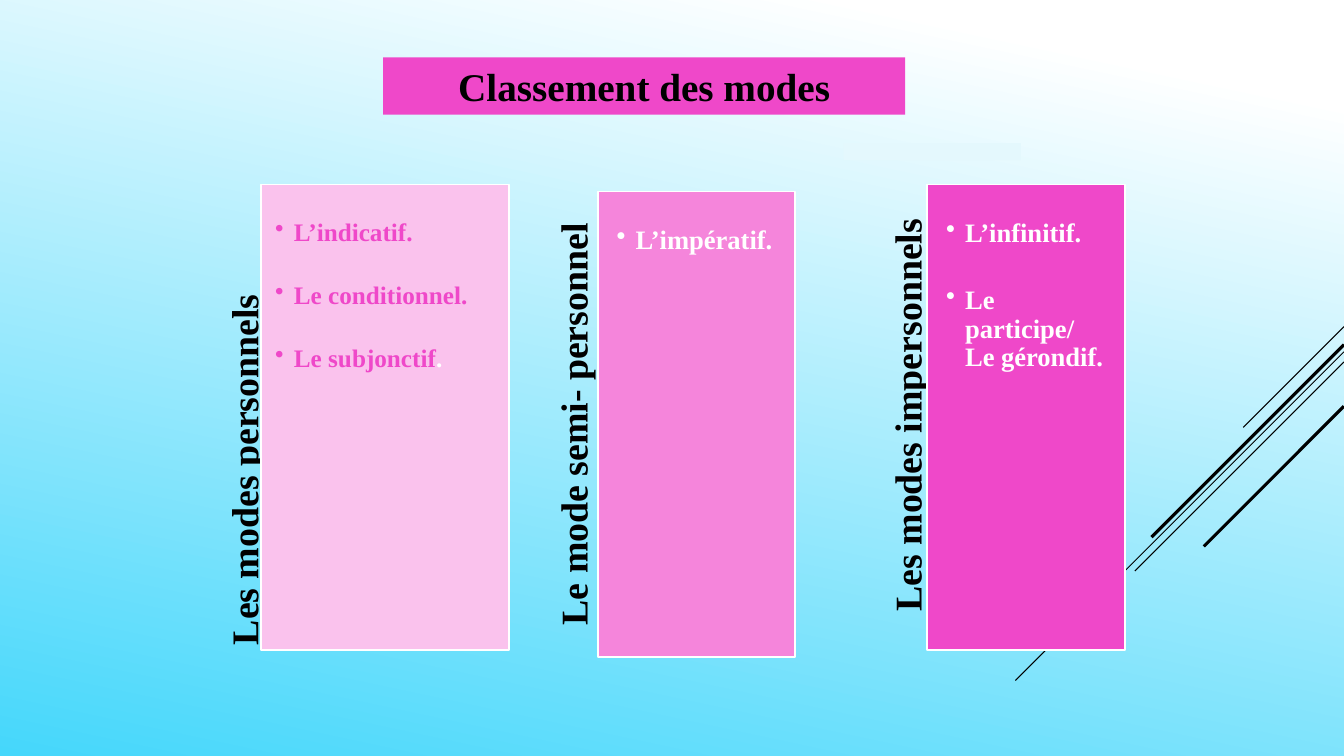
import pptx
import pptx.util
import pptx.dml.color
import pptx.enum.shapes
import pptx.enum.text
import lxml.etree
from pptx.oxml.ns import qn

Pt = pptx.util.Pt
ALIGN = pptx.enum.text.PP_ALIGN
RECT = pptx.enum.shapes.MSO_SHAPE.RECTANGLE
FONT = "Times New Roman"
HUES = {
    "black": "000000", "white": "FFFFFF", "sky": "45D7FB", "mist": "E4F8FD",
    "pale": "FAC2ED", "rose": "F585DB", "pink": "EF48C9",
}
RAYS = [
    (233.3, 72, 0.75), (251.3, 234.7, 0.75), (258.5, 149.4, 0.75),
    (246.2, 137.5, 2.25), (290.2, 100.1, 2.25),
]
MODES = [
    {"box": (186.5, 131.8, 177.1, 332.6), "fill": "pale", "ink": "pink", "size": 18, "pad": 10,
     "items": [[("L’indicatif.", "pink")], [("Le conditionnel.", "pink")],
               [("Le subjonctif", "pink"), (".", "white")]],
     "label": "Les modes personnels", "side": ALIGN.LEFT,
     "shift": (-11.2, 6.1), "span": (313.2, 28.1)},
    {"box": (427, 136.8, 141.1, 332.6), "fill": "rose", "ink": "white", "size": 19, "pad": 13.5,
     "items": [[("L’impératif.", "white")]],
     "label": "Le mode semi- personnel", "side": ALIGN.RIGHT,
     "shift": (-16.6, -2.5), "span": (332.6, 28.1)},
    {"box": (662.4, 131.8, 141.1, 332.6), "fill": "pink", "ink": "white", "size": 19, "pad": 13.5,
     "items": [[("L’infinitif.", "white")], [("Le participe/ Le gérondif.", "white")]],
     "label": "Les modes impersonnels", "side": ALIGN.RIGHT,
     "shift": (-11.9, 1.1), "span": (336.2, 31)},
]


def tint(name):
    return pptx.dml.color.RGBColor.from_string(HUES[name])


def paint(shape, hue):
    shape.fill.solid()
    shape.fill.fore_color.rgb = tint(hue)


def write(para, text, size, hue):
    run = para.add_run()
    run.text = text
    run.font.name = FONT
    run.font.size = Pt(size)
    run.font.bold = True
    run.font.color.rgb = tint(hue)


def inset(frame, left, top, right, bottom):
    frame.word_wrap = True
    frame.auto_size = pptx.enum.text.MSO_AUTO_SIZE.NONE
    frame.margin_left, frame.margin_top = Pt(left), Pt(top)
    frame.margin_right, frame.margin_bottom = Pt(right), Pt(bottom)
    frame.vertical_anchor = pptx.enum.text.MSO_ANCHOR.TOP


def block(slide, box, hue):
    shape = slide.shapes.add_shape(RECT, *map(Pt, box))
    shape.shadow.inherit = False
    paint(shape, hue)
    shape.line.fill.background()
    return shape


def bullet(para):
    props = para._p.get_or_add_pPr()
    props.set("marL", str(Pt(13.5)))
    props.set("indent", str(-Pt(13.5)))
    mark = lxml.etree.SubElement(props, qn("a:buChar"))
    mark.set("char", "•")


def back(slide):
    fill = slide.background.fill
    fill.gradient()
    fill.gradient_angle = 258
    for stop, spot, hue in zip(fill.gradient_stops, (0.1, 1), ("white", "sky")):
        stop.position = spot
        stop.color.rgb = tint(hue)


def rays(slide, edge):
    for top, run, width in RAYS:
        ends = map(Pt, (edge, top, edge - run, top + run))
        line = slide.shapes.add_connector(pptx.enum.shapes.MSO_CONNECTOR.STRAIGHT, *ends)
        line.line.color.rgb = tint("black")
        line.line.width = Pt(width)
        lxml.etree.SubElement(line._element.spPr, qn("a:effectLst"))


def label(slide, mode):
    left, top, wide, high = mode["box"]
    span, deep = mode["span"]
    mid = left + mode["shift"][0]
    row = top + high / 2 + mode["shift"][1]
    box = (mid - span / 2, row - deep / 2, span, deep)
    shape = slide.shapes.add_textbox(*map(Pt, box))
    shape.rotation = 270
    inset(shape.text_frame, 0, 0, 25.2, 0)
    para = shape.text_frame.paragraphs[0]
    para.alignment = mode["side"]
    para.line_spacing = 0.9
    write(para, mode["label"], 27, "black")


def panel(slide, mode):
    shape = block(slide, mode["box"], mode["fill"])
    shape.line.color.rgb = tint("white")
    shape.line.width = Pt(1.25)
    frame = shape.text_frame
    pad, size = mode["pad"], mode["size"]
    inset(frame, pad, 25.2, pad, pad)
    for spot, item in enumerate(mode["items"]):
        para = frame.add_paragraph() if spot else frame.paragraphs[0]
        para.alignment = ALIGN.LEFT
        para.line_spacing = 0.9
        para.space_after = Pt(round(size * 1.42, 1))
        bullet(para)
        for text, hue in item:
            write(para, text, size, hue)
        para.font.size = Pt(size)
        para.font.color.rgb = tint(mode["ink"])


def head(slide, box):
    title = slide.shapes.title
    title.left, title.top, title.width, title.height = map(Pt, box)
    paint(title, "pink")
    inset(title.text_frame, 7.2, 3.6, 7.2, 3.6)
    title.text_frame.vertical_anchor = pptx.enum.text.MSO_ANCHOR.MIDDLE
    para = title.text_frame.paragraphs[0]
    para.alignment = ALIGN.CENTER
    write(para, "Classement des modes", 28, "black")


def main():
    deck = pptx.Presentation()
    deck.slide_width, deck.slide_height = Pt(960), Pt(540)
    slide = deck.slides.add_slide(deck.slide_layouts[5])
    back(slide)
    rays(slide, 960)
    for mode in MODES:
        label(slide, mode)
        panel(slide, mode)
    block(slide, (602.6, 102.2, 126.7, 12.2), "mist")
    head(slide, (273.6, 41, 373, 41))
    deck.save("out.pptx")


if __name__ == "__main__":
    main()
